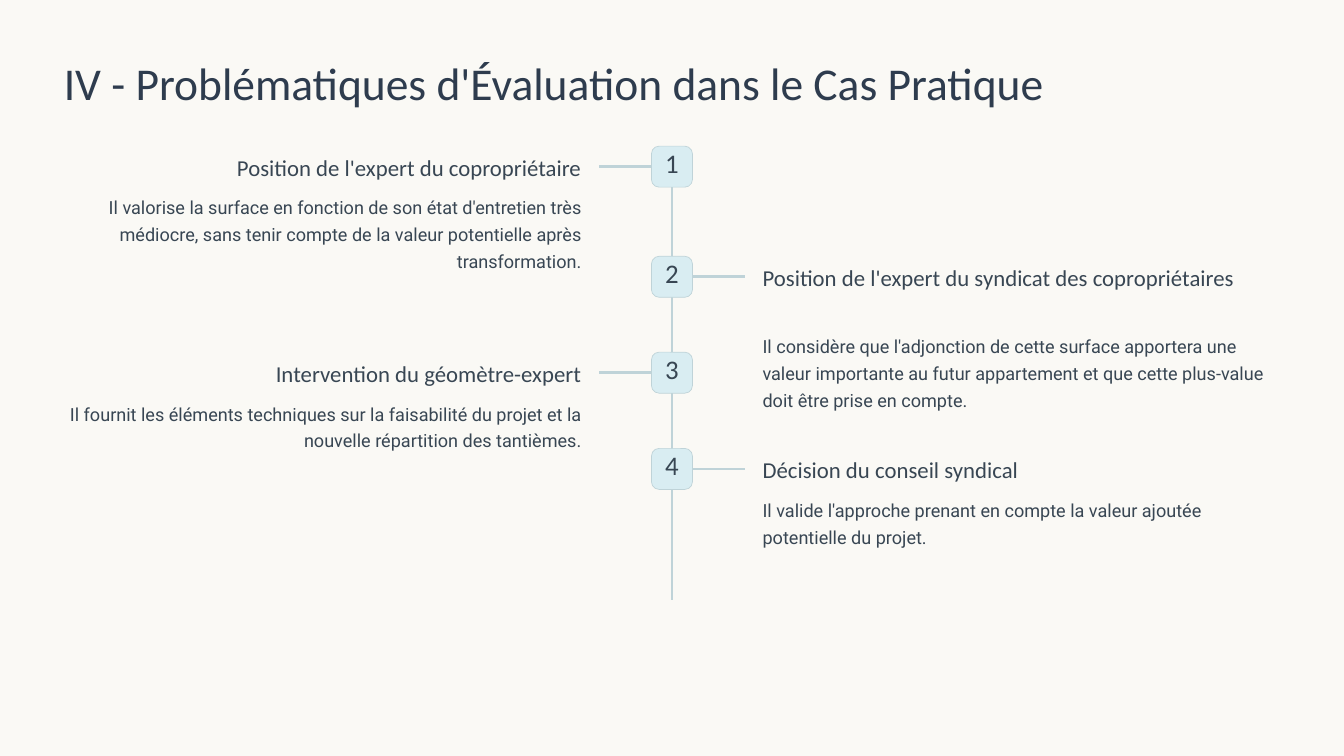
from pptx import Presentation
from pptx.util import Cm, Pt
from pptx.dml.color import RGBColor as Rgb
from pptx.enum.shapes import MSO_SHAPE as Form, MSO_CONNECTOR as Link
from pptx.enum.text import PP_ALIGN as Align, MSO_ANCHOR as Anchor, MSO_AUTO_SIZE as Fit
from pptx.oxml.ns import qn
from lxml.etree import SubElement

INK = {"page": "FAF9F5", "title": "2E3C4E", "text": "384653",
       "line": "BFD3D8", "box": "D9EDF2"}
SIDE = 1.24
STEPS = [
    (0, "Position de l'expert du copropriétaire", 1,
     "Il valorise la surface en fonction de son état d'entretien très médiocre, "
     "sans tenir compte de la valeur potentielle après transformation.", 3),
    (3.33, "Position de l'expert du syndicat des copropriétaires", 2,
     "Il considère que l'adjonction de cette surface apportera une valeur importante "
     "au futur appartement et que cette plus-value doit être prise en compte.", 3),
    (6.23, "Intervention du géomètre-expert", 1,
     "Il fournit les éléments techniques sur la faisabilité du projet et la "
     "nouvelle répartition des tantièmes.", 2),
    (9.14, "Décision du conseil syndical", 1,
     "Il valide l'approche prenant en compte la valeur ajoutée potentielle du projet.", 2),
]


def color(name):
    """Return a named colour."""
    return Rgb.from_string(INK[name])


def write(shape, text, size, lead, align=Align.LEFT, font="Calibri", ink="text", top=0):
    """Fill a shape with one paragraph of text."""
    frame = shape.text_frame
    frame.word_wrap = True
    frame.auto_size = Fit.NONE
    frame.vertical_anchor = Anchor.TOP
    frame.margin_left = frame.margin_right = frame.margin_bottom = 0
    frame.margin_top = Cm(top)
    para = frame.paragraphs[0]
    para.alignment = align
    para.line_spacing = Pt(lead)
    para.space_before = Pt(0)
    run = para.add_run()
    run.text = text
    run.font.name = font
    run.font.size = Pt(size)
    run.font.color.rgb = color(ink)


def label(slide, x, y, w, h, *args, **style):
    """Add a text box."""
    write(slide.shapes.add_textbox(Cm(x), Cm(y), Cm(w), Cm(h)), *args, **style)


def rule(slide, x, y, far, low):
    """Draw a straight line."""
    line = slide.shapes.add_connector(Link.STRAIGHT, Cm(x), Cm(y), Cm(far), Cm(low))
    line.line.color.rgb = color("line")
    line.line.width = Pt(2.2)
    SubElement(line._element.spPr, qn("a:effectLst"))


def badge(slide, mid, y, text):
    """Draw a numbered box centred on the axis."""
    box = slide.shapes.add_shape(Form.ROUNDED_RECTANGLE, Cm(mid - SIDE / 2), Cm(y),
                                 Cm(SIDE), Cm(SIDE))
    box.adjustments[0] = 0.187
    box.shadow.inherit = False
    box.fill.solid()
    box.fill.fore_color.rgb = color("box")
    box.line.color.rgb = color("line")
    box.line.width = Pt(0.6)
    write(box, text, 23, 23, Align.CENTER, top=0.1)


def heading(slide, x, y, w, h):
    """Place the slide title."""
    title = slide.shapes.title
    title.left, title.top, title.width, title.height = Cm(x), Cm(y), Cm(w), Cm(h)
    write(title, "IV - Problématiques d'Évaluation dans le Cas Pratique", 39, 48.5,
          ink="title")


def timeline(slide, x, y, w, h):
    """Draw the axis with steps on alternate sides."""
    mid, wide = x + w / 2, 15.65
    rule(slide, mid, y, mid, y + h)
    for i, (drop, head, rows, body, lines) in enumerate(STEPS):
        left = i % 2 == 0
        sign, align = (-1, Align.RIGHT) if left else (1, Align.LEFT)
        col = x if left else x + w - wide
        top = y + drop
        level = top + SIDE / 2
        rule(slide, mid + sign * SIDE / 2, level, mid + sign * 2.21, level)
        badge(slide, mid, top, str(i + 1))
        label(slide, col, top + 0.2, wide, rows * 0.86, head, 19.5, 24, align)
        label(slide, col, top + 0.52 + rows * 0.86, wide, lines * 0.83, body, 15.5, 23,
              align, font="Roboto")


def main():
    """Build and save the slide."""
    deck = Presentation()
    deck.slide_width, deck.slide_height = Cm(40.64), Cm(22.86)
    slide = deck.slides.add_slide(deck.slide_layouts[5])
    slide.background.fill.solid()
    slide.background.fill.fore_color.rgb = color("page")
    heading(slide, 1.93, 1.6, 33.66, 1.73)
    timeline(slide, 1.93, 4.42, 36.78, 13.72)
    deck.save("out.pptx")


if __name__ == "__main__":
    main()
